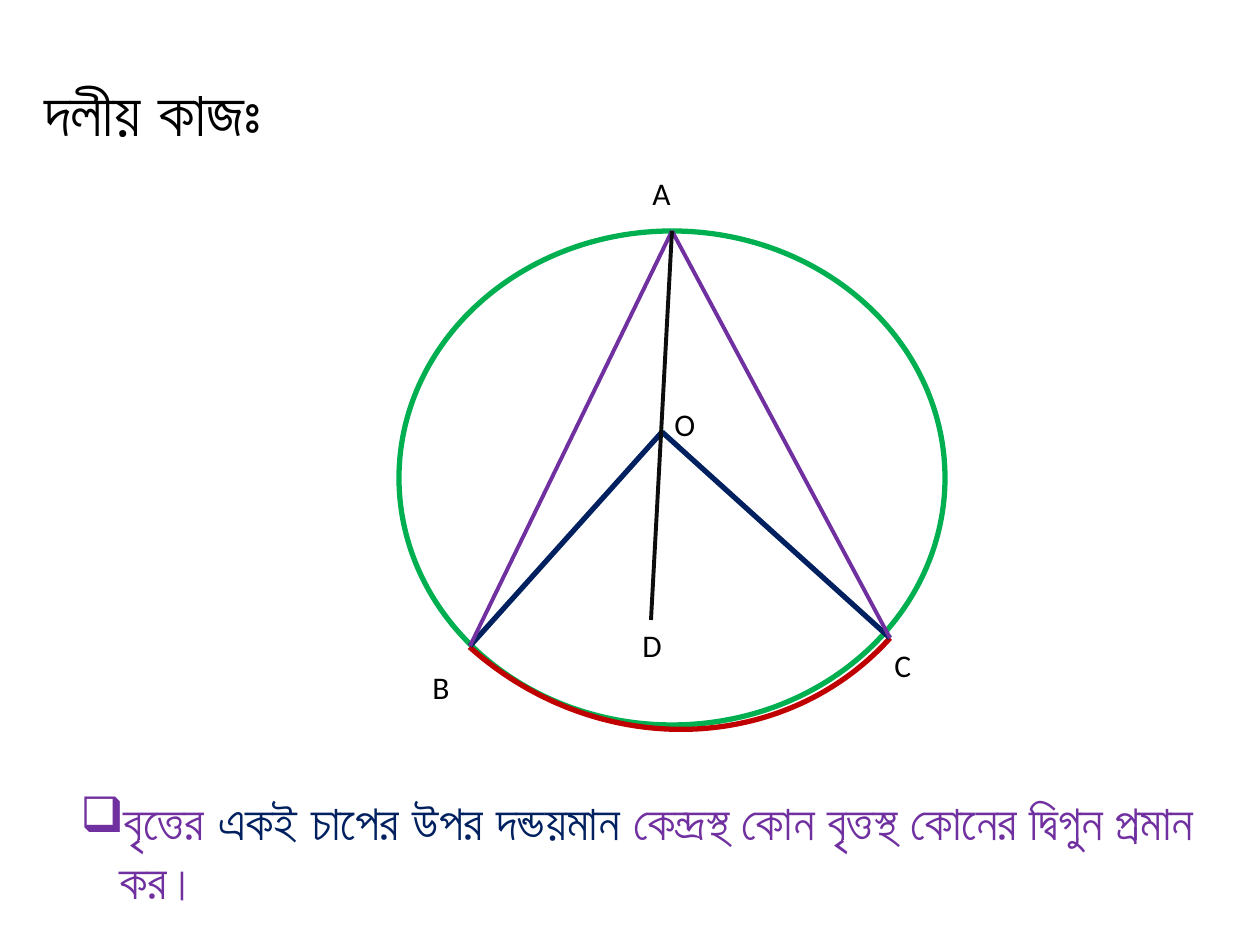
from lxml.etree import SubElement
from pptx import Presentation
from pptx.dml.color import RGBColor
from pptx.enum.shapes import MSO_CONNECTOR, MSO_SHAPE
from pptx.enum.text import MSO_AUTO_SIZE
from pptx.oxml.ns import qn
from pptx.util import Emu, Pt

COLORS = {
    "black": "000000",
    "diameter": "0D0D0D",
    "circle": "00B050",
    "arc": "C00000",
    "navy": "002060",
    "purple": "7030A0",
}
POINTS = {
    "A": (672, 231),
    "B": (470, 646),
    "C": (890, 638),
    "O": (662, 432),
    "D": (651, 620),
}
SEGMENTS = [
    ("OC", "navy", 3),
    ("OB", "navy", 3),
    ("AB", "purple", 2.25),
    ("AC", "purple", 2.25),
    ("AD", "diameter", 2.25),
]
LABELS = {
    "A": (640, 168, 42, 50),
    "B": (420, 662, 63, 50),
    "C": (882, 640, 32, 53),
    "O": (662, 399, 42, 50),
    "D": (630, 620, 42, 53),
}
TASK = [
    ("বৃত্তের", "purple", False),
    (" একই চাপের উপর দন্ডয়মান ", "navy", True),
    ("কেন্দ্রস্থ কোন বৃত্তস্থ কোনের দ্বিগুন প্রমান কর।", "purple", False),
]


def px(value):
    """Turn pixels into EMU at 126 pixels to the inch."""
    return Emu(round(value * 914400 / 126))


def color(name):
    """Return a named colour."""
    return RGBColor.from_string(COLORS[name])


def set_line(shape, color_name, width):
    """Set the line colour and width of a shape or connector."""
    shape.line.color.rgb = color(color_name)
    shape.line.width = Pt(width)


def add_outline(slide, kind, box, color_name, rotation=0):
    """Add an unfilled curved outline."""
    shape = slide.shapes.add_shape(kind, *map(px, box))
    shape.shadow.inherit = False
    shape.fill.background()
    shape.rotation = rotation
    set_line(shape, color_name, 3)


def add_segment(slide, ends, color_name, width):
    """Join two named points with a straight line."""
    start, end = (POINTS[name] for name in ends)
    connector = slide.shapes.add_connector(
        MSO_CONNECTOR.STRAIGHT, *map(px, start + end)
    )
    set_line(connector, color_name, width)
    SubElement(connector._element.spPr, qn("a:effectLst"))


def add_text(slide, box, runs, size, font_name):
    """Add a wrapped text box and return its paragraph."""
    text_frame = slide.shapes.add_textbox(*map(px, box)).text_frame
    text_frame.word_wrap = True
    text_frame.auto_size = MSO_AUTO_SIZE.SHAPE_TO_FIT_TEXT
    paragraph = text_frame.paragraphs[0]
    for text, color_name, bold in runs:
        run = paragraph.add_run()
        run.text = text
        run.font.name = font_name
        run.font.size = Pt(size)
        run.font.bold = bold
        run.font.color.rgb = color(color_name)
    return paragraph


def add_bullet(paragraph, character, indent):
    """Give a paragraph a hanging bullet."""
    properties = paragraph._p.get_or_add_pPr()
    properties.set("marL", str(px(indent)))
    properties.set("indent", str(px(-indent)))
    SubElement(properties, qn("a:buChar")).set("char", character)


def main():
    """Build and save the slide."""
    presentation = Presentation()
    presentation.slide_width = px(1260)
    presentation.slide_height = px(945)
    slide = presentation.slides.add_slide(presentation.slide_layouts[6])

    add_outline(slide, MSO_SHAPE.OVAL, (399, 231, 546, 494), "circle")
    add_outline(slide, MSO_SHAPE.ARC, (374, 126, 575, 614), "arc", 131.9)
    for segment in SEGMENTS:
        add_segment(slide, *segment)
    for letter, box in LABELS.items():
        add_text(slide, box, [(letter, "black", False)], 18, "Calibri")

    title = [("দলীয় কাজঃ", "black", True)]
    add_text(slide, (32, 67, 388, 127), title, 36, "Roboto")
    task = add_text(slide, (68, 785, 1166, 131), TASK, 28, "Roboto")
    add_bullet(task, "❑", 39)
    presentation.save("out.pptx")


if __name__ == "__main__":
    main()
